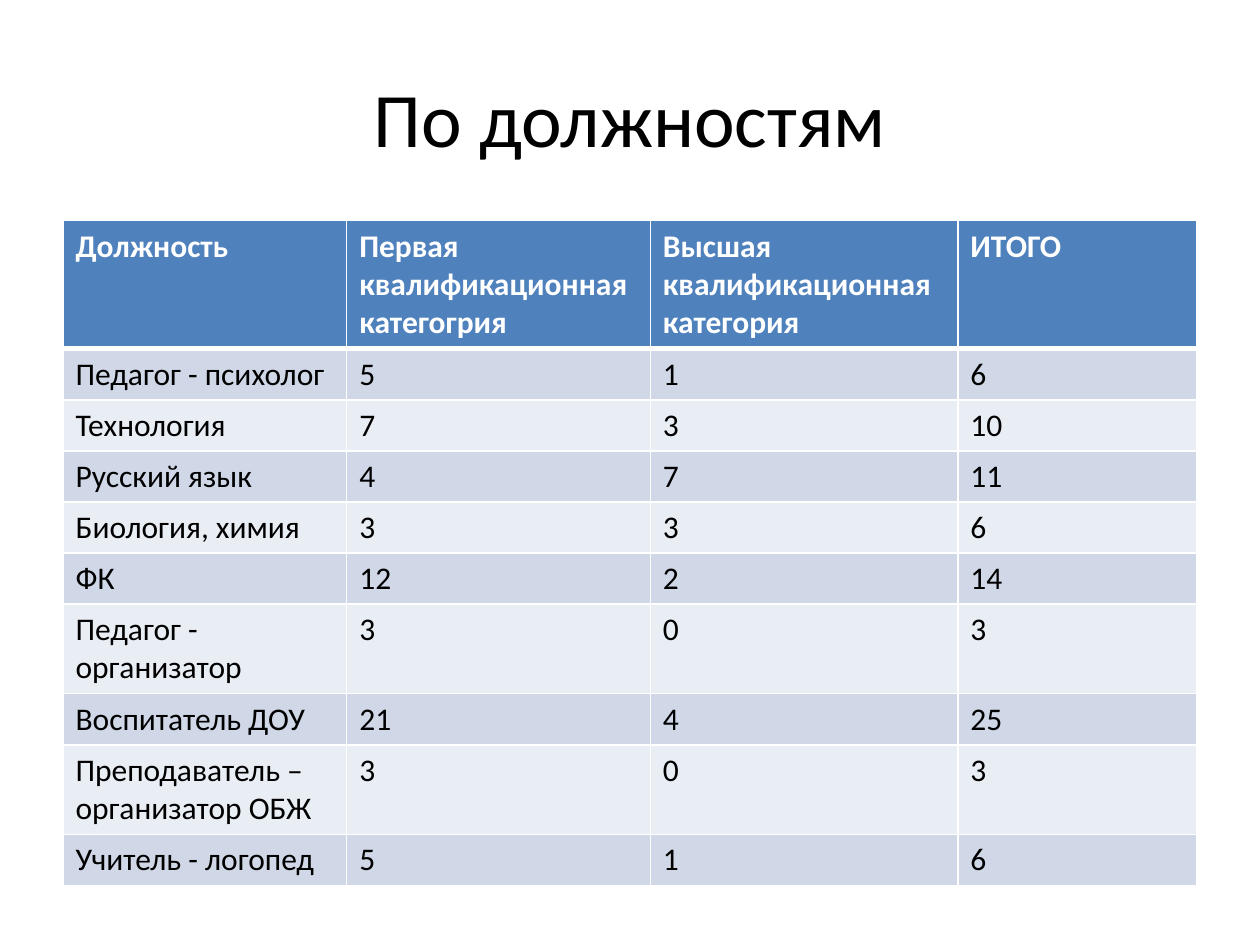
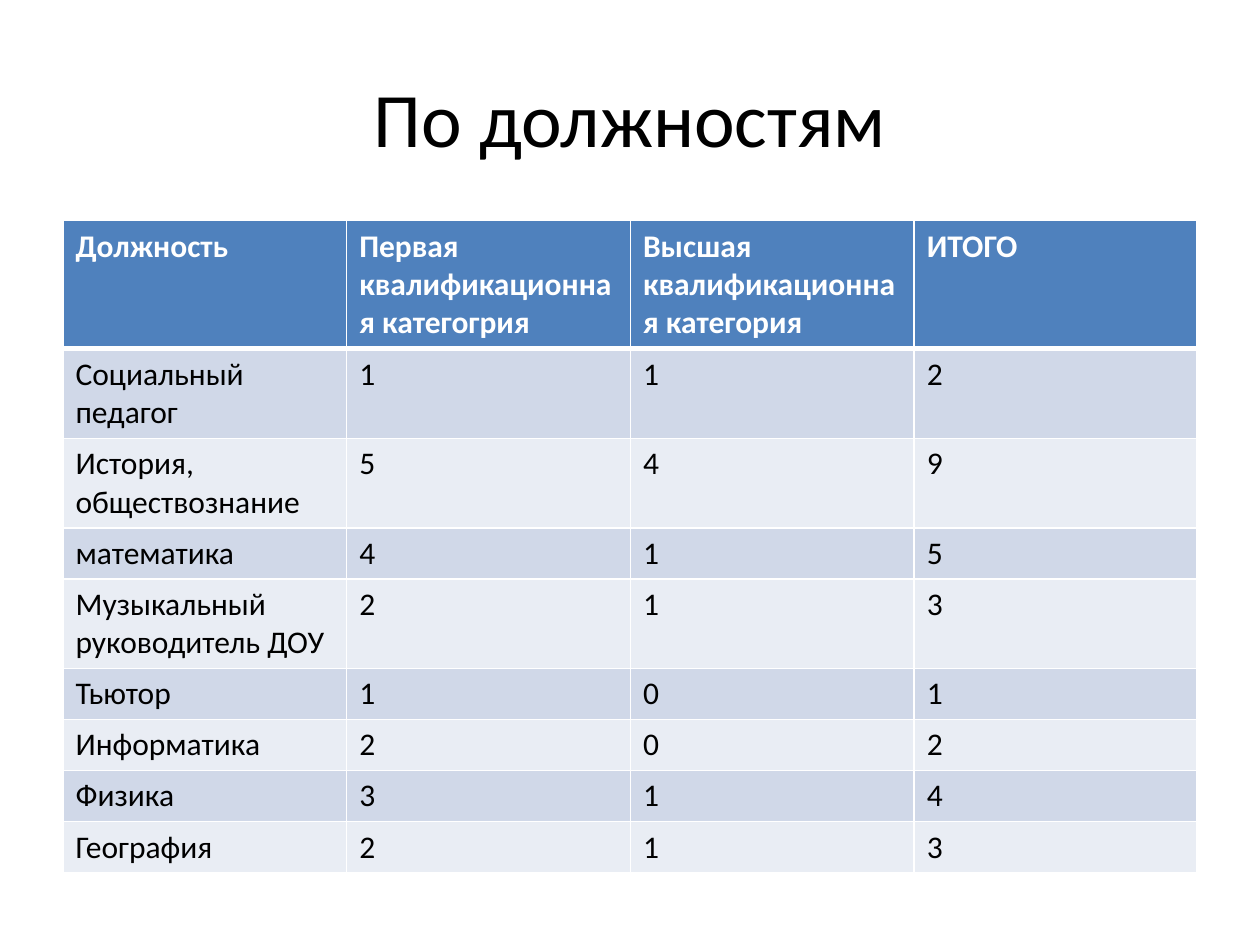
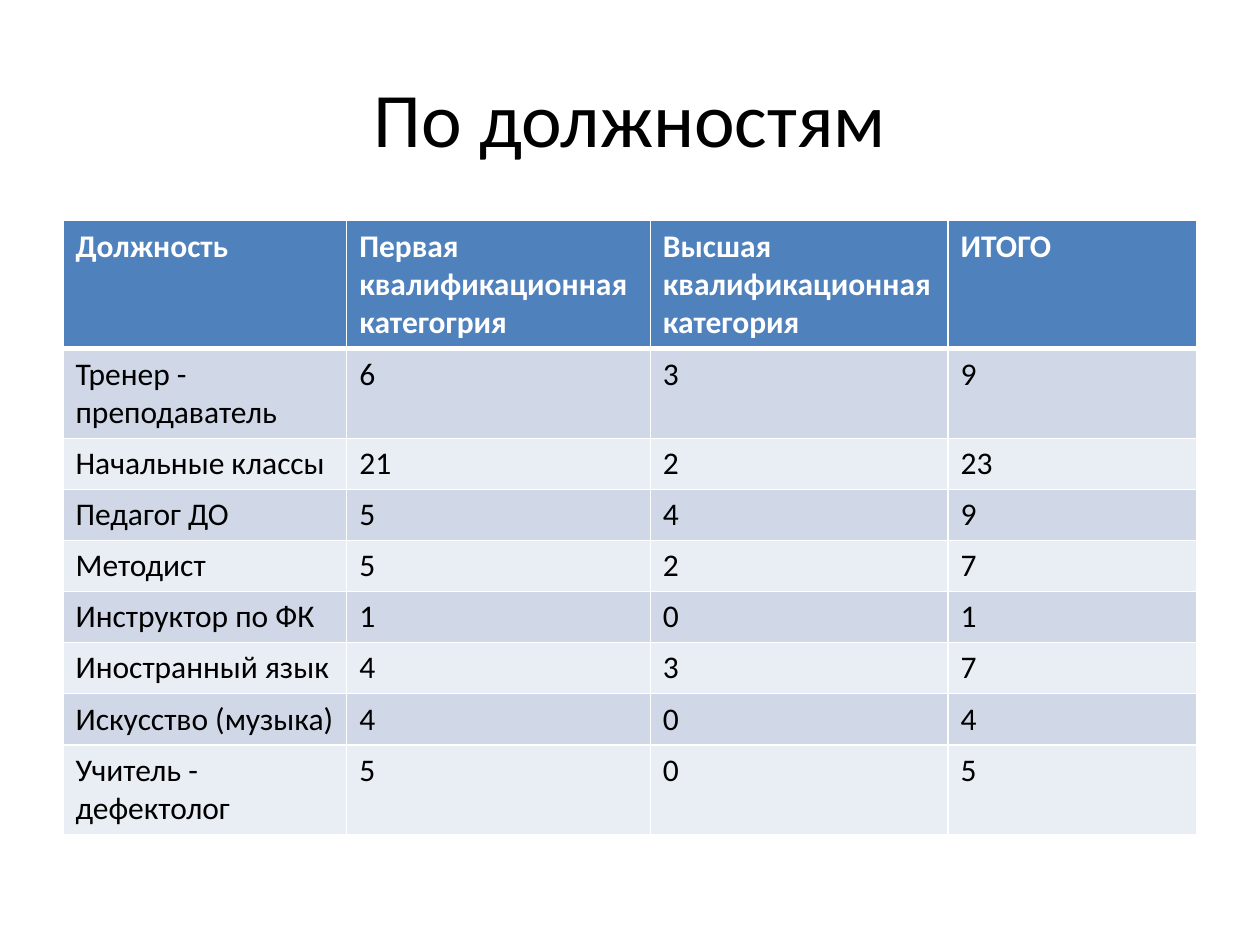
from dataclasses import dataclass

from lxml import etree
from pptx import Presentation
from pptx.dml.color import RGBColor
from pptx.enum import text
from pptx.oxml import ns
from pptx.util import Cm, Pt


@dataclass(frozen=True)
class Theme:
    font: str = "Calibri"
    title_size: int = 44
    table_size: int = 18
    ink: str = "000000"
    white: str = "FFFFFF"
    header: str = "4F81BD"
    bands: tuple = ("D0D8E8", "E9EDF4")
    grid_line: int = 1
    header_line: int = 3


theme = Theme()


def format_runs(frame, size, color, bold=False):
    for paragraph in frame.paragraphs:
        for run in paragraph.runs:
            run.font.name = theme.font
            run.font.size = Pt(size)
            run.font.bold = bold
            run.font.color.rgb = RGBColor.from_string(color)


def add_borders(cell, top, bottom):
    widths = {"lnL": theme.grid_line, "lnR": theme.grid_line, "lnT": top, "lnB": bottom}
    properties = cell._tc.get_or_add_tcPr()
    for side, width in widths.items():
        line = etree.SubElement(properties, ns.qn(f"a:{side}"), w=str(Pt(width)))
        fill = etree.SubElement(line, ns.qn("a:solidFill"))
        etree.SubElement(fill, ns.qn("a:srgbClr"), val=theme.white)


# Content: widths of the first three columns, then post, first and highest category
heading = "По должностям"
header = (
    "Должность",
    "Первая квалификационная категогрия",
    "Высшая квалификационная категория",
    "ИТОГО",
)
staff_slides = [
    ((5.72, 6.12, 6.2), [
        ("Педагог - психолог", 5, 1),
        ("Технология", 7, 3),
        ("Русский язык", 4, 7),
        ("Биология, химия", 3, 3),
        ("ФК", 12, 2),
        ("Педагог - организатор", 3, 0),
        ("Воспитатель ДОУ", 21, 4),
        ("Преподаватель –организатор ОБЖ", 3, 0),
        ("Учитель - логопед", 5, 1),
    ]),
    ((5.72, 5.72, 5.72), [
        ("Социальный педагог", 1, 1),
        ("История, обществознание", 5, 4),
        ("математика", 4, 1),
        ("Музыкальный руководитель ДОУ", 2, 1),
        ("Тьютор", 1, 0),
        ("Информатика", 2, 0),
        ("Физика", 3, 1),
        ("География", 2, 1),
    ]),
    ((5.72, 6.12, 6), [
        ("Тренер - преподаватель", 6, 3),
        ("Начальные классы", 21, 2),
        ("Педагог ДО", 5, 4),
        ("Методист", 5, 2),
        ("Инструктор по ФК", 1, 0),
        ("Иностранный язык", 4, 3),
        ("Искусство (музыка)", 4, 0),
        ("Учитель - дефектолог", 5, 0),
    ]),
]

# Page geometry in centimetres
margin, content_width = 1.27, 22.86
title_top, title_height = 0.76, 3.18
table_top, row_height = 4.45, 1.03

prs = Presentation()
prs.slide_width, prs.slide_height = Cm(25.4), Cm(19.05)

for widths, posts in staff_slides:
    slide = prs.slides.add_slide(prs.slide_layouts[5])

    # Title
    title = slide.shapes.title
    title.left, title.top = Cm(margin), Cm(title_top)
    title.width, title.height = Cm(content_width), Cm(title_height)
    title.text_frame.text = heading
    title.text_frame.vertical_anchor = text.MSO_ANCHOR.MIDDLE
    title.text_frame.paragraphs[0].alignment = text.PP_ALIGN.CENTER
    format_runs(title.text_frame, theme.title_size, theme.ink)

    # Table: the last column takes the remaining width and holds the totals
    rows = [header] + [(post, first, highest, first + highest)
                       for post, first, highest in posts]
    staff = slide.shapes.add_table(
        len(rows), len(header), Cm(margin), Cm(table_top),
        Cm(content_width), Cm(row_height * len(rows))).table
    for column, width in zip(staff.columns, (*widths, content_width - sum(widths))):
        column.width = Cm(width)

    for r, values in enumerate(rows):
        is_header = r == 0
        staff.rows[r].height = Cm(row_height)
        for c, value in enumerate(values):
            cell = staff.cell(r, c)
            add_borders(cell,
                        top=theme.header_line if r == 1 else theme.grid_line,
                        bottom=theme.header_line if is_header else theme.grid_line)
            cell.fill.solid()
            cell.fill.fore_color.rgb = RGBColor.from_string(
                theme.header if is_header else theme.bands[(r - 1) % 2])
            cell.text_frame.text = str(value)
            format_runs(cell.text_frame, theme.table_size,
                        theme.white if is_header else theme.ink, is_header)

prs.save("out.pptx")
